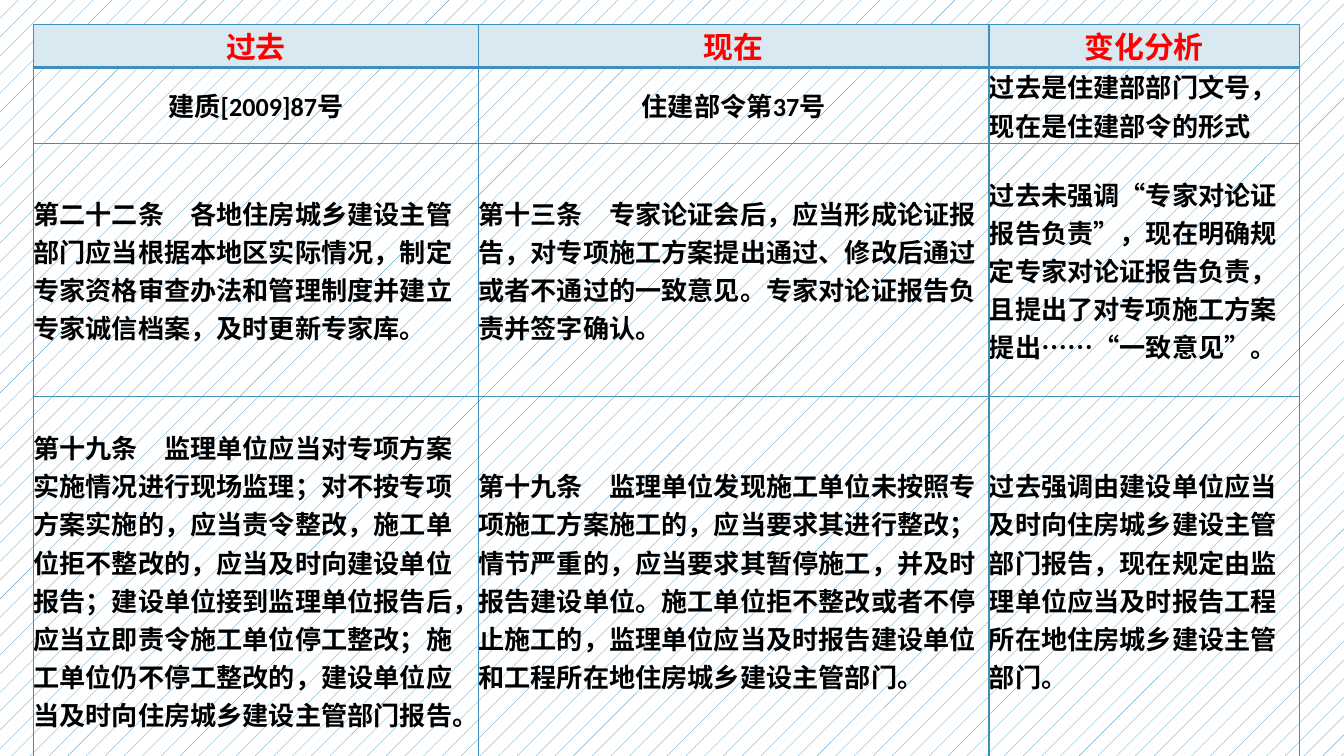
from lxml import etree
from pptx import Presentation
from pptx.dml.color import RGBColor
from pptx.enum.dml import MSO_PATTERN
from pptx.enum.text import MSO_ANCHOR, PP_ALIGN
from pptx.oxml.ns import qn
from pptx.util import Cm, Pt

CENTER, LEFT = PP_ALIGN.CENTER, PP_ALIGN.LEFT
MIDDLE = MSO_ANCHOR.MIDDLE
DOTS = MSO_PATTERN.PERCENT_5

COLORS = {"line": "3F8FBD", "header": "D9E9F2", "title": "FF0000",
          "text": "000000", "paper": "FFFFFF"}
LATIN, CHINESE = "Calibri", "Noto Sans CJK SC"

HEADINGS = ["过去", "现在", "变化分析"]
ROWS = [
    ["建质[2009]87号",
     "住建部令第37号",
     "过去是住建部部门文号，现在是住建部令的形式"],
    ["第二十二条　各地住房城乡建设主管部门应当根据本地区实际情况，制定专家资格审查办法和管理制度并建立专家诚信档案，及时更新专家库。",
     "第十三条　专家论证会后，应当形成论证报告，对专项施工方案提出通过、修改后通过或者不通过的一致意见。专家对论证报告负责并签字确认。",
     "过去未强调“专家对论证报告负责”，现在明确规定专家对论证报告负责，且提出了对专项施工方案提出……“一致意见”。"],
    ["第十九条　监理单位应当对专项方案实施情况进行现场监理；对不按专项方案实施的，应当责令整改，施工单位拒不整改的，应当及时向建设单位报告；建设单位接到监理单位报告后，应当立即责令施工单位停工整改；施工单位仍不停工整改的，建设单位应当及时向住房城乡建设主管部门报告。",
     "第十九条　监理单位发现施工单位未按照专项施工方案施工的，应当要求其进行整改；情节严重的，应当要求其暂停施工，并及时报告建设单位。施工单位拒不整改或者不停止施工的，监理单位应当及时报告建设单位和工程所在地住房城乡建设主管部门。",
     "过去强调由建设单位应当及时向住房城乡建设主管部门报告，现在规定由监理单位应当及时报告工程所在地住房城乡建设主管部门。"],
]
COLUMN_WIDTHS = [8.41, 9.65, 5.87]
ROW_HEIGHTS = [0.76, 1.22, 4.78, 6.96]


def rgb(name):
    return RGBColor.from_string(COLORS[name])


def write(cell, text, size=14, color="text", font=CHINESE, align=LEFT):
    cell.margin_left = cell.margin_right = cell.margin_top = cell.margin_bottom = 0
    cell.vertical_anchor = MIDDLE
    para = cell.text_frame.paragraphs[0]
    para.alignment = align
    span = para.add_run()
    span.text = text
    span.font.size = Pt(size)
    span.font.bold = True
    span.font.color.rgb = rgb(color)
    span.font.name = font
    east_asian = etree.SubElement(span.font._element, qn("a:ea"))
    east_asian.set("typeface", CHINESE)


def set_borders(cell, bottom=1):
    """Draw all four cell edges at 1 pt, with a chosen bottom width."""
    properties = cell._tc.get_or_add_tcPr()
    widths = {"a:lnL": 1, "a:lnR": 1, "a:lnT": 1, "a:lnB": bottom}
    for position, (tag, width) in enumerate(widths.items()):
        line = etree.Element(qn(tag), w=str(Pt(width)))
        fill = etree.SubElement(line, qn("a:solidFill"))
        etree.SubElement(fill, qn("a:srgbClr"), val=COLORS["line"])
        properties.insert(position, line)


deck = Presentation()
deck.slide_width, deck.slide_height = Cm(25.4), Cm(14.29)
page = deck.slides.add_slide(deck.slide_layouts[6])
backdrop = page.background.fill
backdrop.patterned()
backdrop.pattern = DOTS
backdrop.fore_color.rgb = rgb("line")
backdrop.back_color.rgb = rgb("paper")

table = page.shapes.add_table(
    len(ROW_HEIGHTS), len(COLUMN_WIDTHS), Cm(0.63), Cm(0.46),
    Cm(sum(COLUMN_WIDTHS)), Cm(sum(ROW_HEIGHTS))).table
table.horz_banding = False
for column, width in zip(table.columns, COLUMN_WIDTHS):
    column.width = Cm(width)
for row, height in zip(table.rows, ROW_HEIGHTS):
    row.height = Cm(height)

for r, texts in enumerate([HEADINGS] + ROWS):
    for c, text in enumerate(texts):
        cell = table.cell(r, c)
        if r == 0:
            cell.fill.solid()
            cell.fill.fore_color.rgb = rgb("header")
            write(cell, text, size=16, color="title", font=LATIN, align=CENTER)
        else:
            cell.fill.background()
            is_document_number = r == 1 and c < 2
            write(cell, text, font=LATIN if r == 1 else CHINESE,
                  align=CENTER if is_document_number else LEFT)
        set_borders(cell, bottom=2 if r == 0 else 1)

deck.save("out.pptx")
